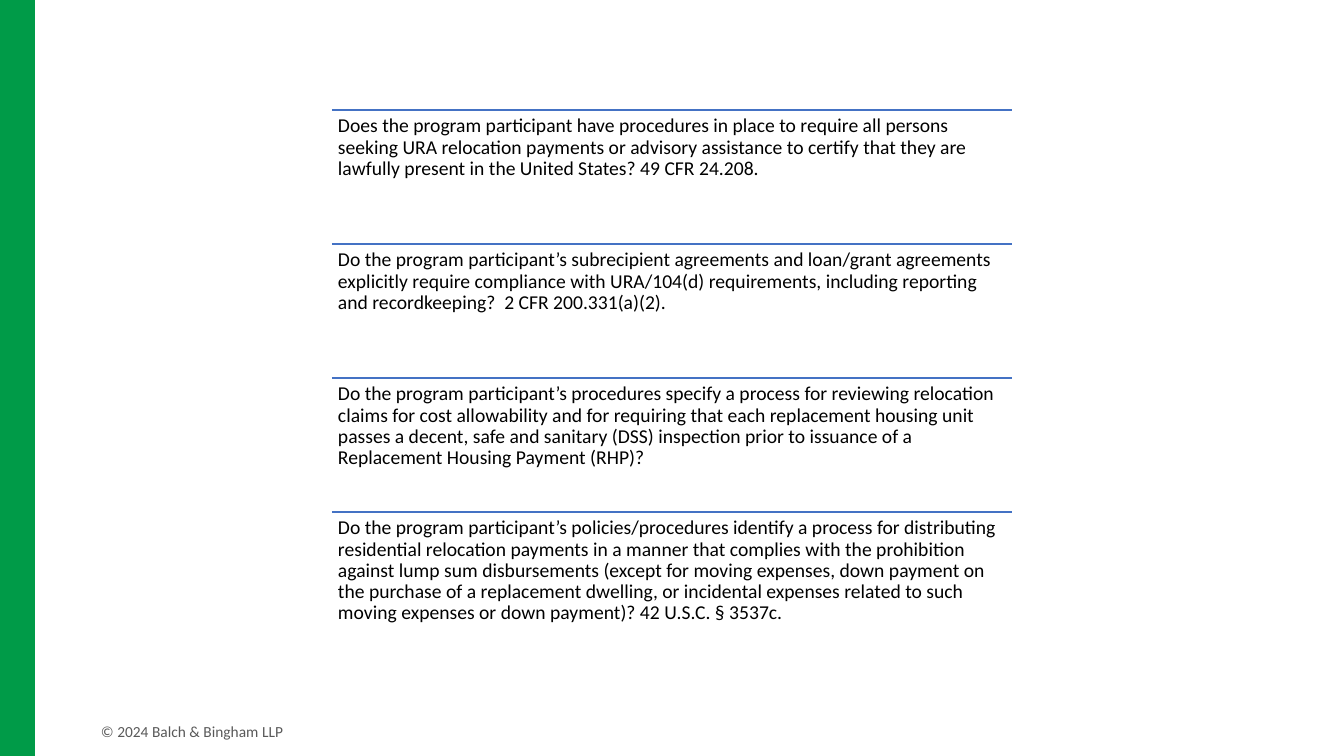
from pptx import Presentation
from pptx import util as u
from pptx.dml.color import RGBColor
from pptx.enum import shapes, text
from pptx.oxml.ns import qn
from lxml import etree

QUESTIONS = [
    "Does the program participant have procedures in place to require all persons seeking URA "
    "relocation payments or advisory assistance to certify that they are lawfully present in the "
    "United States? 49 CFR 24.208.",
    "Do the program participant’s subrecipient agreements and loan/grant agreements explicitly "
    "require compliance with URA/104(d) requirements, including reporting and recordkeeping?  "
    "2 CFR 200.331(a)(2).",
    "Do the program participant’s procedures specify a process for reviewing relocation claims "
    "for cost allowability and for requiring that each replacement housing unit passes a decent, "
    "safe and sanitary (DSS) inspection prior to issuance of a Replacement Housing Payment (RHP)?",
    "Do the program participant’s policies/procedures identify a process for distributing "
    "residential relocation payments in a manner that complies with the prohibition against lump "
    "sum disbursements (except for moving expenses, down payment on the purchase of a replacement "
    "dwelling, or incidental expenses related to such moving expenses or down payment)? "
    "42 U.S.C. § 3537c.",
]
COPYRIGHT = "© 2024 Balch & Bingham LLP"

COLORS = {"band": "009B48", "rule": "4472C4", "body": "000000", "footer": "595959"}
FONT = "Calibri"
PAGE_W, PAGE_H = 1344, 756
BAND_W = 35
LIST_X, LIST_Y, LIST_W, ROW_H = 332, 110, 680, 134
INSET = 6
FOOTER = (91, 717, 211, 29)


def px(length):
    return u.Emu(round(length * 914400 / 100.8))


def color(name):
    return RGBColor.from_string(COLORS[name])


def add_text(page, bounds, words, size, color_name, frame_format, para_format):
    box = page.shapes.add_textbox(*map(px, bounds))
    frame = box.text_frame
    for name, value in frame_format.items():
        setattr(frame, name, value)
    para = frame.paragraphs[0]
    for name, value in para_format.items():
        setattr(para, name, value)
    span = para.add_run()
    span.text = words
    for name, value in {"name": FONT, "size": u.Pt(size)}.items():
        setattr(span.font, name, value)
    span.font.color.rgb = color(color_name)


def add_rule(page, x, y, width):
    rule = page.shapes.add_connector(
        shapes.MSO_CONNECTOR.STRAIGHT, px(x), px(y), px(x + width), px(y))
    rule.line.color.rgb = color("rule")
    rule.line.width = u.Pt(1)
    etree.SubElement(rule._element.spPr, qn("a:effectLst"))


def main():
    deck = Presentation()
    deck.slide_width, deck.slide_height = px(PAGE_W), px(PAGE_H)
    page = deck.slides.add_slide(deck.slide_layouts[6])

    band = page.shapes.add_shape(
        shapes.MSO_SHAPE.RECTANGLE, 0, 0, px(BAND_W), px(PAGE_H))
    band.shadow.inherit = False
    band.fill.solid()
    band.fill.fore_color.rgb = color("band")
    band.line.fill.background()

    add_text(page, FOOTER, COPYRIGHT, 11, "footer", {"word_wrap": False}, {})

    margins = {f"margin_{side}": px(INSET) for side in ("left", "top", "right", "bottom")}
    question_frame = {"word_wrap": True, "vertical_anchor": text.MSO_ANCHOR.TOP, **margins}
    for row, question in enumerate(QUESTIONS):
        y = LIST_Y + row * ROW_H
        add_rule(page, LIST_X, y, LIST_W)
        add_text(page, (LIST_X, y, LIST_W, ROW_H), question, 14, "body",
                 question_frame, {"line_spacing": 0.9})

    deck.save("out.pptx")


if __name__ == "__main__":
    main()
